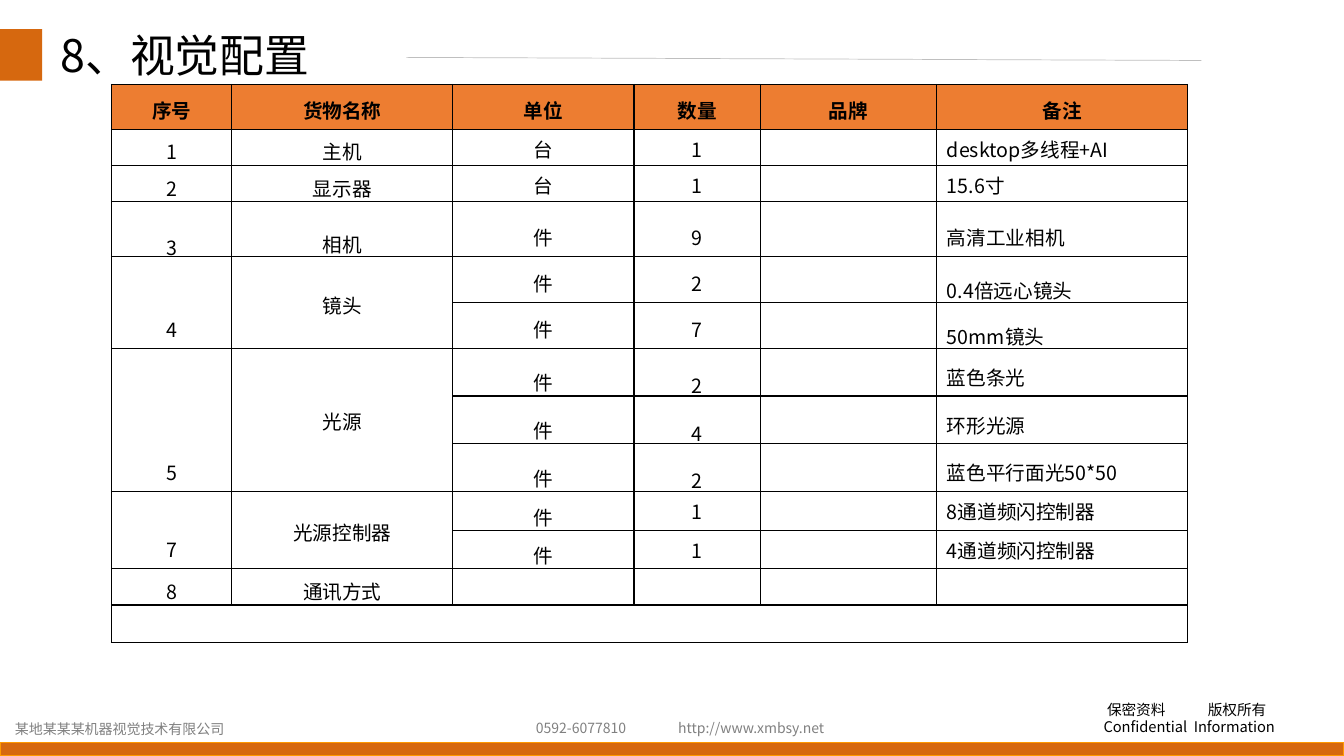
from dataclasses import dataclass

from lxml.etree import SubElement
from pptx import Presentation
from pptx.dml.color import RGBColor
from pptx.enum.shapes import MSO_CONNECTOR as Connector, MSO_SHAPE as Shape
from pptx.enum.text import MSO_ANCHOR as Anchor, PP_ALIGN as Align
from pptx.oxml.ns import qn
from pptx.util import Pt


@dataclass(frozen=True)
class Theme:
    font: str = "Noto Sans CJK SC"
    black: str = "000000"
    white: str = "FFFFFF"
    gray: str = "808080"
    rule: str = "BFBFBF"
    orange: str = "D6680F"
    edge: str = "FF9900"
    header: str = "ED7D31"
    title_size: float = 32
    table_size: float = 14
    notice_size: float = 10.5
    footer_size: float = 10


@dataclass(frozen=True)
class Label:
    text: str
    left: float
    top: float
    width: float
    height: float


@dataclass(frozen=True)
class GoodsRow:
    height: float
    texts: tuple[str, ...]
    spacings: tuple[float, ...]
    rows_spanned: int = 1


THEME = Theme()
COLUMN_WIDTHS = (85.9, 157.9, 129.4, 90.3, 126, 179.3)
HEADINGS = ("序号", "货物名称", "单位", "数量", "品牌", "备注")
HEADER_HEIGHT, CLOSING_HEIGHT = 32, 26.6
NOTE_COLUMN = 5

# Spacings follow the six columns; rows with a span start a merged group
GOODS = (
    GoodsRow(25.9, ("1", "主机", "台", "1", "", "desktop多线程+AI"), (1.1, 1.1, 1, 1, 1, 1)),
    GoodsRow(25.9, ("2", "显示器", "台", "1", "", "15.6寸"), (1.1, 1.1, 1, 1, 1, 1)),
    GoodsRow(39.3, ("3", "相机", "件", "9", "", "高清工业相机"), (1.9, 1.8, 1.2, 1, 1, 1)),
    GoodsRow(32.7, ("4", "镜头", "件", "2", "", "0.4倍远心镜头"), (1.1, 1.2, 1.2, 1.2, 1, 1.5), 2),
    GoodsRow(32.7, ("", "", "件", "7", "", "50mm镜头"), (1, 1, 1.2, 1.2, 1, 1.5)),
    GoodsRow(34.2, ("5", "光源", "件", "2", "", "蓝色条光"), (1.1, 1.1, 1.5, 1.6, 1, 1), 3),
    GoodsRow(34.2, ("", "", "件", "4", "", "环形光源"), (1, 1, 1.5, 1.6, 1, 1)),
    GoodsRow(34.2, ("", "", "件", "2", "", "蓝色平行面光50*50"), (1, 1, 1.5, 1.6, 1, 1)),
    GoodsRow(27.5, ("7", "光源控制器", "件", "1", "", "8通道频闪控制器"), (1.1, 1.1, 1.2, 1, 1, 1), 2),
    GoodsRow(27.5, ("", "", "件", "1", "", "4通道频闪控制器"), (1, 1, 1.2, 1, 1, 1)),
    GoodsRow(25.9, ("8", "通讯方式", "", "", "", ""), (1.1, 1.1, 1, 1, 1, 1)),
)

FOOTER_LABELS = (
    Label("http://www.xmbsy.net", 477.4, 510.5, 120.2, 19.4),
    Label("0592-6077810", 375.8, 510.5, 79.2, 19.4),
    Label("某地某某某机器视觉技术有限公司", 3.6, 511.2, 169.2, 19.4),
)


def color(code: str) -> RGBColor:
    return RGBColor.from_string(code)


def write(para, text: str, *, size: float, ink: str = THEME.black, bold: bool = False,
          align=Align.LEFT, spacing: float = 1.0, tab: float = 0, indent: float = 0) -> None:
    """Fill one paragraph; an empty text only fixes its line height."""
    if indent:
        properties = para._p.get_or_add_pPr()
        properties.set("marL", str(Pt(indent)))
        properties.set("indent", "0")
    if tab:
        tabs = SubElement(para._p.get_or_add_pPr(), qn("a:tabLst"))
        SubElement(tabs, qn("a:tab"), pos=str(Pt(tab)), algn="l")
    para.alignment = align
    para.line_spacing = spacing
    if not text:
        SubElement(para._p, qn("a:endParaRPr"), sz=str(int(size * 100)))
        return
    span = para.add_run()
    span.text = text
    span.font.name = THEME.font
    span.font.size = Pt(size)
    span.font.bold = bold
    span.font.color.rgb = color(ink)
    SubElement(span._r.get_or_add_rPr(), qn("a:ea"), typeface=THEME.font)


def add_box(page, left: float, top: float, width: float, height: float):
    box = page.shapes.add_textbox(Pt(left), Pt(top), Pt(width), Pt(height))
    box.text_frame.word_wrap = True
    return box.text_frame


def add_bar(page, left: float, top: float, width: float, height: float, line: str = "") -> None:
    bar = page.shapes.add_shape(Shape.RECTANGLE, Pt(left), Pt(top), Pt(width), Pt(height))
    bar.shadow.inherit = False
    bar.fill.solid()
    bar.fill.fore_color.rgb = color(THEME.orange)
    if line:
        bar.line.color.rgb = color(line)
        bar.line.width = Pt(1)
    else:
        bar.line.fill.background()


def style_cell(cell, fill: str) -> None:
    properties = cell._tc.get_or_add_tcPr()
    for side in ("a:lnL", "a:lnR", "a:lnT", "a:lnB"):
        border = SubElement(properties, qn(side), w=str(Pt(1)))
        paint = SubElement(border, qn("a:solidFill"))
        SubElement(paint, qn("a:srgbClr"), val=THEME.black)
    cell.fill.solid()
    cell.fill.fore_color.rgb = color(fill)


def add_footer(page) -> None:
    add_bar(page, 0, 530.6, 960, 9.4, line=THEME.edge)
    notice = add_box(page, 781.2, 496.8, 156.2, 32.4)
    write(notice.paragraphs[0], "保密资料\t版权所有", size=THEME.notice_size, tab=58, indent=2.5)
    write(notice.add_paragraph(), "Confidential\tInformation", size=THEME.notice_size, tab=64.5)
    for label in FOOTER_LABELS:
        frame = add_box(page, label.left, label.top, label.width, label.height)
        write(frame.paragraphs[0], label.text, size=THEME.footer_size, ink=THEME.gray)


def add_heading(page) -> None:
    rule = page.shapes.add_connector(Connector.STRAIGHT, Pt(290.2), Pt(41), Pt(858.2), Pt(43.2))
    rule.line.color.rgb = color(THEME.rule)
    rule.line.width = Pt(0.5)
    SubElement(rule._element.spPr, qn("a:effectLst"))
    add_bar(page, 0, 20.9, 30.2, 36.7)
    frame = add_box(page, 36, 20.9, 286.6, 51.1)
    write(frame.paragraphs[0], "8、视觉配置", size=THEME.title_size, spacing=0.9)


def add_goods_table(page) -> None:
    heights = (HEADER_HEIGHT, *(goods.height for goods in GOODS), CLOSING_HEIGHT)
    table = page.shapes.add_table(len(heights), len(COLUMN_WIDTHS), Pt(79.7), Pt(60.3),
                                  Pt(sum(COLUMN_WIDTHS)), Pt(sum(heights))).table
    for column, width in zip(table.columns, COLUMN_WIDTHS):
        column.width = Pt(width)
    for row, height in zip(table.rows, heights):
        row.height = Pt(height)

    # Header and closing rows
    last = len(heights) - 1
    for index, heading in enumerate(HEADINGS):
        cell = table.cell(0, index)
        style_cell(cell, THEME.header)
        write(cell.text_frame.paragraphs[0], heading, size=THEME.table_size, bold=True,
              align=Align.CENTER, spacing=1.2)
        closing = table.cell(last, index)
        style_cell(closing, THEME.white)
        write(closing.text_frame.paragraphs[0], "", size=THEME.table_size)

    # Goods rows
    for number, goods in enumerate(GOODS, start=1):
        for index, (text, spacing) in enumerate(zip(goods.texts, goods.spacings)):
            cell = table.cell(number, index)
            style_cell(cell, THEME.white)
            cell.vertical_anchor = Anchor.MIDDLE if index == 1 else Anchor.BOTTOM
            write(cell.text_frame.paragraphs[0], text, size=THEME.table_size, spacing=spacing,
                  align=Align.LEFT if index == NOTE_COLUMN else Align.CENTER)

    # Merged groups
    for number, goods in enumerate(GOODS, start=1):
        if goods.rows_spanned > 1:
            for index in (0, 1):
                table.cell(number, index).merge(table.cell(number + goods.rows_spanned - 1, index))
    table.cell(last, 0).merge(table.cell(last, len(HEADINGS) - 1))


def main() -> None:
    deck = Presentation()
    deck.slide_width, deck.slide_height = Pt(960), Pt(540)
    page = deck.slides.add_slide(deck.slide_layouts[6])
    add_footer(page)
    add_heading(page)
    add_goods_table(page)
    deck.save("out.pptx")


if __name__ == "__main__":
    main()
